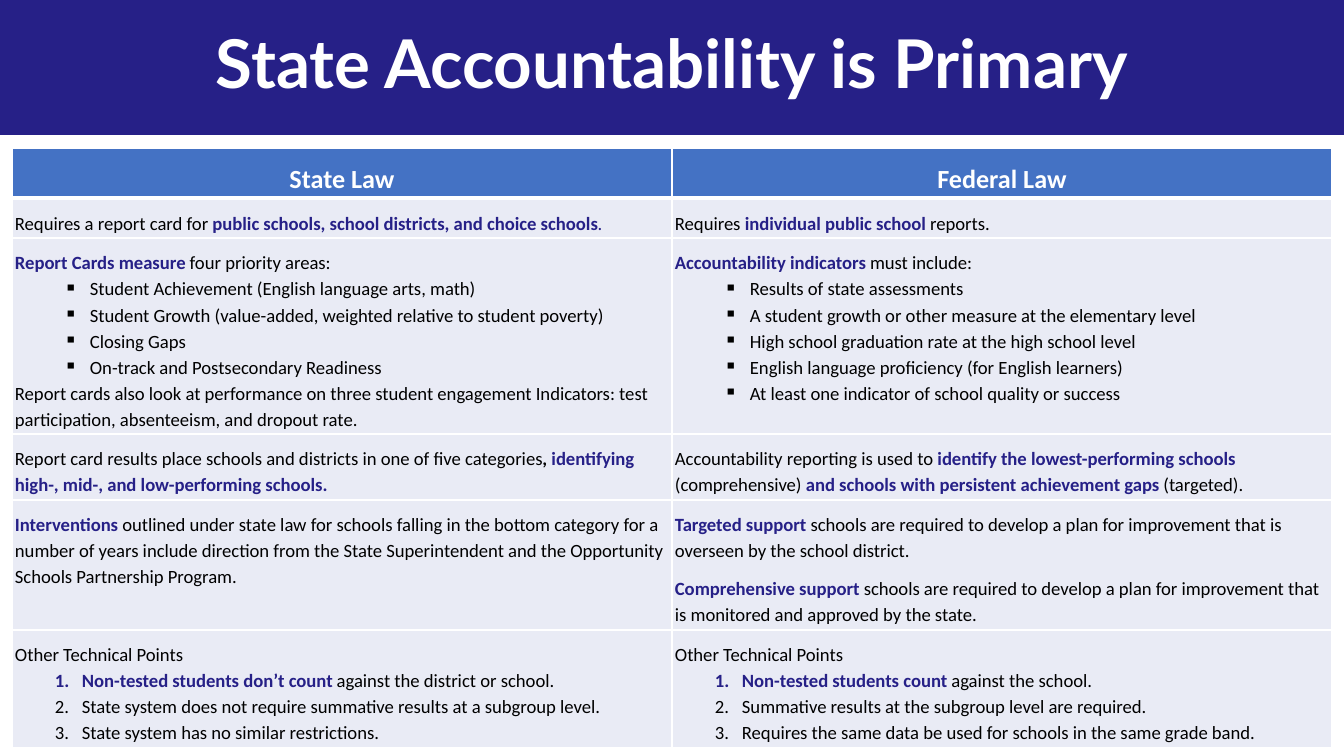
from lxml import etree
from pptx import Presentation
from pptx import util as u
from pptx.dml.color import RGBColor
from pptx.enum import shapes, text
from pptx.oxml.ns import qn

EMU_PER_PX = 914400 / 134.4
SLIDE_WIDTH, SLIDE_HEIGHT = 1344, 756
COLORS = {
    "navy": "262087",
    "header": "4472C4",
    "body": "E9EBF5",
    "white": "FFFFFF",
    "black": "000000",
}
# kind of list: left margin, hanging indent, bullet tag, bullet attributes
LISTS = {
    "bullet": (75, -26, "a:buChar", {"char": "▪"}),
    "number": (67, -27, "a:buAutoNum", {"type": "arabicPeriod"}),
}
ROW_HEIGHTS = [50, 40, 196, 66, 130, 118]


def px(value):
    return u.Emu(round(value * EMU_PER_PX))


def rgb(name):
    return RGBColor.from_string(COLORS[name])


def key(words):
    return words, {"color": "navy", "bold": True}


def para(*runs, **style):
    return runs, style


def listed(kind, *items):
    """Return one list paragraph per item; an item is a string or a tuple of runs."""
    return [para(*(item if isinstance(item, list) else [item]), kind=kind) for item in items]


ROWS = [
    (
        [para("Requires a report card for ",
              key("public schools, school districts, and choice schools"),
              (".", {"color": "navy"}))],
        [para("Requires ", key("individual public school "), "reports.")],
    ),
    (
        [para(key("Report Cards measure "), "four priority areas:"),
         *listed("bullet",
                 "Student Achievement (English language arts, math)",
                 "Student Growth (value-added, weighted relative to student poverty)",
                 "Closing Gaps",
                 "On-track and Postsecondary Readiness"),
         para("Report cards also look at performance on three student engagement "
              "Indicators: test participation, absenteeism, and dropout rate.")],
        [para(key("Accountability indicators "), "must include:"),
         *listed("bullet",
                 "Results of state assessments",
                 "A student growth or other measure at the elementary level",
                 "High school graduation rate at the high school level",
                 "English language proficiency (for English learners)",
                 "At least one indicator of school quality or success")],
    ),
    (
        [para("Report card results place schools and districts in one of five categories",
              (", ", {"bold": True}),
              key("identifying high-, mid-, and low-performing schools."), after=6)],
        [para("Accountability reporting is used to ",
              key("identify the lowest-performing schools "), "(comprehensive) ",
              key("and schools with persistent achievement gaps "), "(targeted).", after=6)],
    ),
    (
        [para(key("Interventions"),
              " outlined under state law for schools falling in the bottom category for a "
              "number of years include direction from the State Superintendent and the "
              "Opportunity Schools Partnership Program.", before=6)],
        [para(key("Targeted support "),
              "schools are required to develop a plan for improvement that is overseen "
              "by the school district.", after=6),
         para(key("Comprehensive support "),
              "schools are required to develop a plan for improvement that is monitored "
              "and approved by the state.")],
    ),
    (
        [para("Other Technical Points"),
         *listed("number",
                 [key("Non-tested students don’t count "), "against the district or school."],
                 "State system does not require summative results at a subgroup level.",
                 "State system has no similar restrictions.")],
        [para("Other Technical Points"),
         *listed("number",
                 [key("Non-tested students count "), "against the school."],
                 "Summative results at the subgroup level are required.",
                 "Requires the same data be used for schools in the same grade band.")],
    ),
]


def add_run(paragraph, words, font="Calibri", size=10, color="black", bold=False):
    run = paragraph.add_run()
    run.text = words
    run.font.name = font
    run.font.size = u.Pt(size)
    run.font.bold = bold
    run.font.color.rgb = rgb(color)


def set_list(paragraph, kind):
    margin, indent, tag, attributes = LISTS[kind]
    properties = paragraph._p.get_or_add_pPr()
    properties.set("marL", str(px(margin)))
    properties.set("indent", str(px(indent)))
    etree.SubElement(properties, qn(tag), attributes)


def write(frame, paragraphs, align=text.PP_ALIGN.LEFT, spacing=1.15, **defaults):
    """Fill a text frame; each run may override the default run format."""
    for index, (runs, style) in enumerate(paragraphs):
        paragraph = frame.add_paragraph() if index else frame.paragraphs[0]
        paragraph.alignment = align
        paragraph.line_spacing = spacing
        paragraph.space_before = u.Pt(style.get("before", 0))
        paragraph.space_after = u.Pt(style.get("after", 0))
        if "kind" in style:
            set_list(paragraph, style["kind"])
        for run in runs:
            words, override = (run, {}) if isinstance(run, str) else run
            add_run(paragraph, words, **{**defaults, **override})


def set_borders(cell, top=1, bottom=1):
    properties = cell._tc.get_or_add_tcPr()
    widths = {"a:lnL": 1, "a:lnR": 1, "a:lnT": top, "a:lnB": bottom}
    for tag, width in widths.items():
        line = etree.SubElement(properties, qn(tag), {"w": str(u.Pt(width))})
        fill = etree.SubElement(line, qn("a:solidFill"))
        etree.SubElement(fill, qn("a:srgbClr"), {"val": COLORS["white"]})


def style_cell(cell, fill, **borders):
    set_borders(cell, **borders)
    cell.fill.solid()
    cell.fill.fore_color.rgb = rgb(fill)
    cell.margin_left = cell.margin_right = cell.margin_bottom = px(3)
    cell.margin_top = px(11)


def add_title(slide, left, top, width, height):
    box = [px(value) for value in (left, top, width, height)]
    banner = slide.shapes.add_shape(shapes.MSO_SHAPE.RECTANGLE, *box)
    banner.shadow.inherit = False
    banner.fill.solid()
    banner.fill.fore_color.rgb = rgb("navy")
    banner.line.fill.background()
    title = slide.shapes.add_textbox(*box[:3], px(height - 1))
    title.text_frame.word_wrap = True
    title.text_frame.vertical_anchor = text.MSO_ANCHOR.MIDDLE
    write(title.text_frame, [para("State Accountability is Primary")],
          align=text.PP_ALIGN.CENTER, spacing=0.9,
          font="Lato", size=36, color="white", bold=True)


def add_comparison(slide, left, top, width):
    headings = ["State Law", "Federal Law"]
    table = slide.shapes.add_table(
        len(ROW_HEIGHTS), len(headings),
        px(left), px(top), px(width), px(sum(ROW_HEIGHTS))).table
    table.horz_banding = False
    for row, height in zip(table.rows, ROW_HEIGHTS):
        row.height = px(height)
    for column, heading in enumerate(headings):
        cell = table.cell(0, column)
        style_cell(cell, "header", bottom=3)
        write(cell.text_frame, [para(heading)], align=text.PP_ALIGN.CENTER,
              size=14, color="white", bold=True)
    for row, contents in enumerate(ROWS, start=1):
        for column, paragraphs in enumerate(contents):
            cell = table.cell(row, column)
            style_cell(cell, "body", top=3 if row == 1 else 1)
            write(cell.text_frame, paragraphs)


def main():
    presentation = Presentation()
    presentation.slide_width = px(SLIDE_WIDTH)
    presentation.slide_height = px(SLIDE_HEIGHT)
    slide = presentation.slides.add_slide(presentation.slide_layouts[6])
    add_title(slide, 0, 0, SLIDE_WIDTH, 135)
    add_comparison(slide, 12, 148, SLIDE_WIDTH - 2 * 12)
    presentation.save("out.pptx")


if __name__ == "__main__":
    main()
